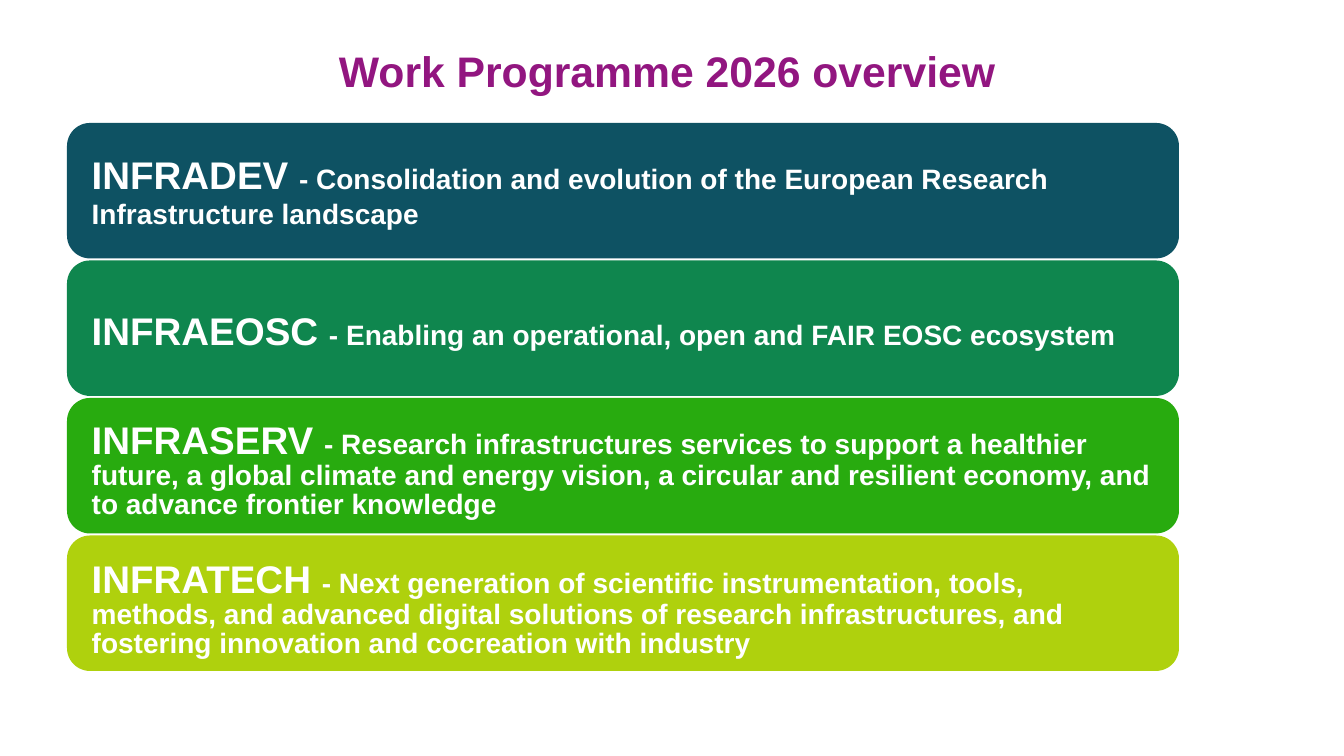
"""Build the Work Programme 2026 overview slide with its four destinations."""
from pptx import Presentation, util as u
from pptx.dml.color import RGBColor
from pptx.enum import shapes, text

PURPLE = RGBColor(0x92, 0x16, 0x80)
WHITE = RGBColor(0xFF, 0xFF, 0xFF)
NAVY = RGBColor(0x0E, 0x52, 0x63)
TEAL = RGBColor(0x0F, 0x86, 0x4E)
GREEN = RGBColor(0x28, 0xAB, 0x0F)
LIME = RGBColor(0xAF, 0xD1, 0x0D)

TITLE = "Work Programme 2026 overview"
# code, summary, bar colour, line spacing, top inset
DESTINATIONS = [
    ("INFRADEV", "Consolidation and evolution of the European Research "
     "Infrastructure landscape", NAVY, 1.0, 0),
    ("INFRAEOSC", "Enabling an operational, open and FAIR EOSC ecosystem",
     TEAL, 1.0, 4),
    ("INFRASERV", "Research infrastructures services to support a healthier "
     "future, a global climate and energy vision, a circular and resilient "
     "economy, and to advance frontier knowledge", GREEN, 0.86, 11),
    ("INFRATECH", "Next generation of scientific instrumentation, tools, "
     "methods, and advanced digital solutions of research infrastructures, "
     "and fostering innovation and cocreation with industry",
     LIME, 0.86, 14),
]

SLIDE_WIDTH, SLIDE_HEIGHT = 1344, 756
BARS_LEFT, BARS_RIGHT, BARS_TOP, BARS_BOTTOM = 67, 1179, 123, 671
BAR_GAP, CORNER = 2, 23


def px(length):
    return u.Emu(round(length * 914400 / 100.8))


def set_margins(frame, left=0, top=0, right=0, bottom=0):
    frame.margin_left, frame.margin_top = px(left), px(top)
    frame.margin_right, frame.margin_bottom = px(right), px(bottom)
    frame.word_wrap = True


def style(run, size, colour):
    run.font.name = "Arial"
    run.font.size = u.Pt(size)
    run.font.bold = True
    run.font.color.rgb = colour


def add_title(slide):
    heading = slide.shapes.add_textbox(px(339), px(45), px(720), px(52))
    frame = heading.text_frame
    set_margins(frame)
    frame.text = TITLE
    style(frame.paragraphs[0].runs[0], 30.5, PURPLE)


def add_destinations(slide):
    count = len(DESTINATIONS)
    height = (BARS_BOTTOM - BARS_TOP - BAR_GAP * (count - 1)) / count
    for row, (code, summary, colour, spacing, inset) in enumerate(DESTINATIONS):
        top = BARS_TOP + row * (height + BAR_GAP)
        bar = slide.shapes.add_shape(
            shapes.MSO_SHAPE.ROUNDED_RECTANGLE, px(BARS_LEFT), px(top),
            px(BARS_RIGHT - BARS_LEFT), px(height))
        bar.adjustments[0] = CORNER / height
        bar.shadow.inherit = False
        bar.fill.solid()
        bar.fill.fore_color.rgb = colour
        bar.line.fill.background()

        frame = bar.text_frame
        set_margins(frame, left=18, top=inset, right=20)
        frame.vertical_anchor = text.MSO_ANCHOR.MIDDLE
        label = frame.paragraphs[0]
        label.alignment = text.PP_ALIGN.LEFT
        label.line_spacing = spacing
        for words, size in ((f"{code} ", 27.5), (f"- {summary}", 20)):
            run = label.add_run()
            run.text = words
            style(run, size, WHITE)


def main():
    deck = Presentation()
    deck.slide_width, deck.slide_height = px(SLIDE_WIDTH), px(SLIDE_HEIGHT)
    slide = deck.slides.add_slide(deck.slide_layouts[6])
    add_destinations(slide)
    add_title(slide)
    deck.save("out.pptx")


if __name__ == "__main__":
    main()
